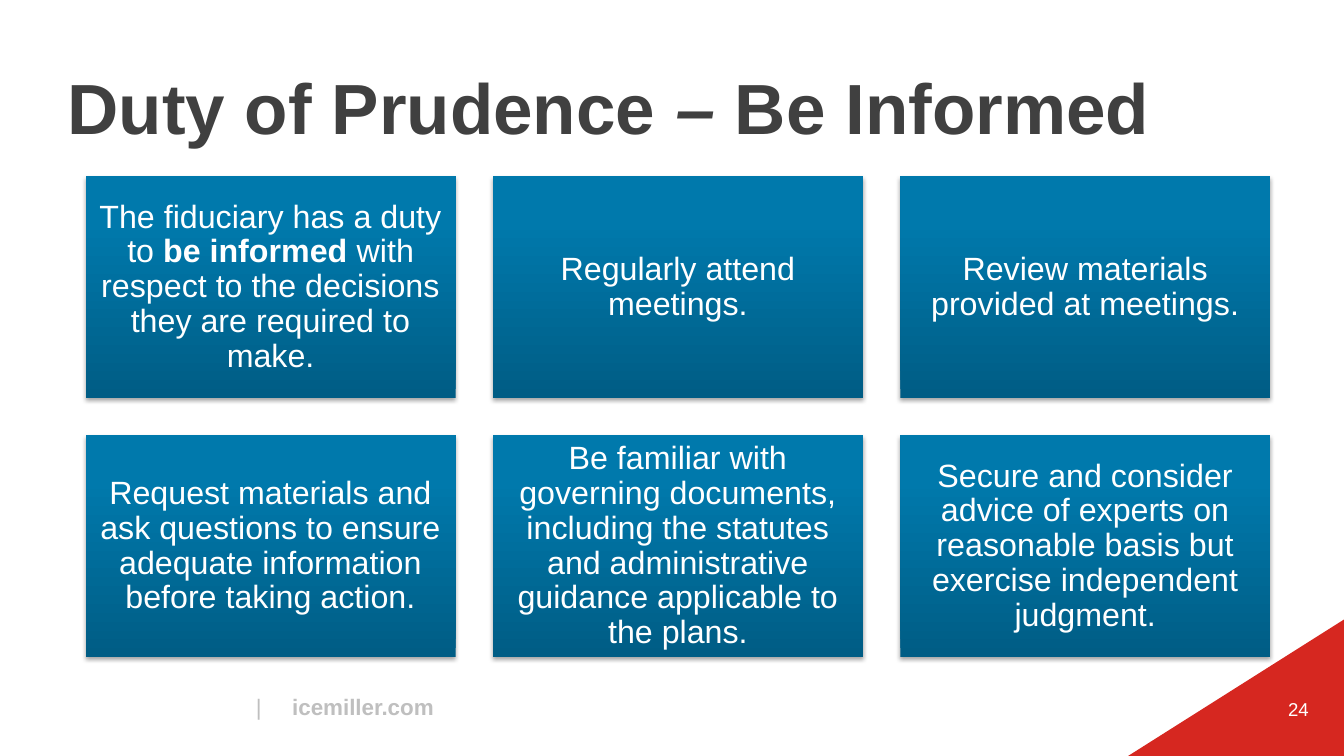
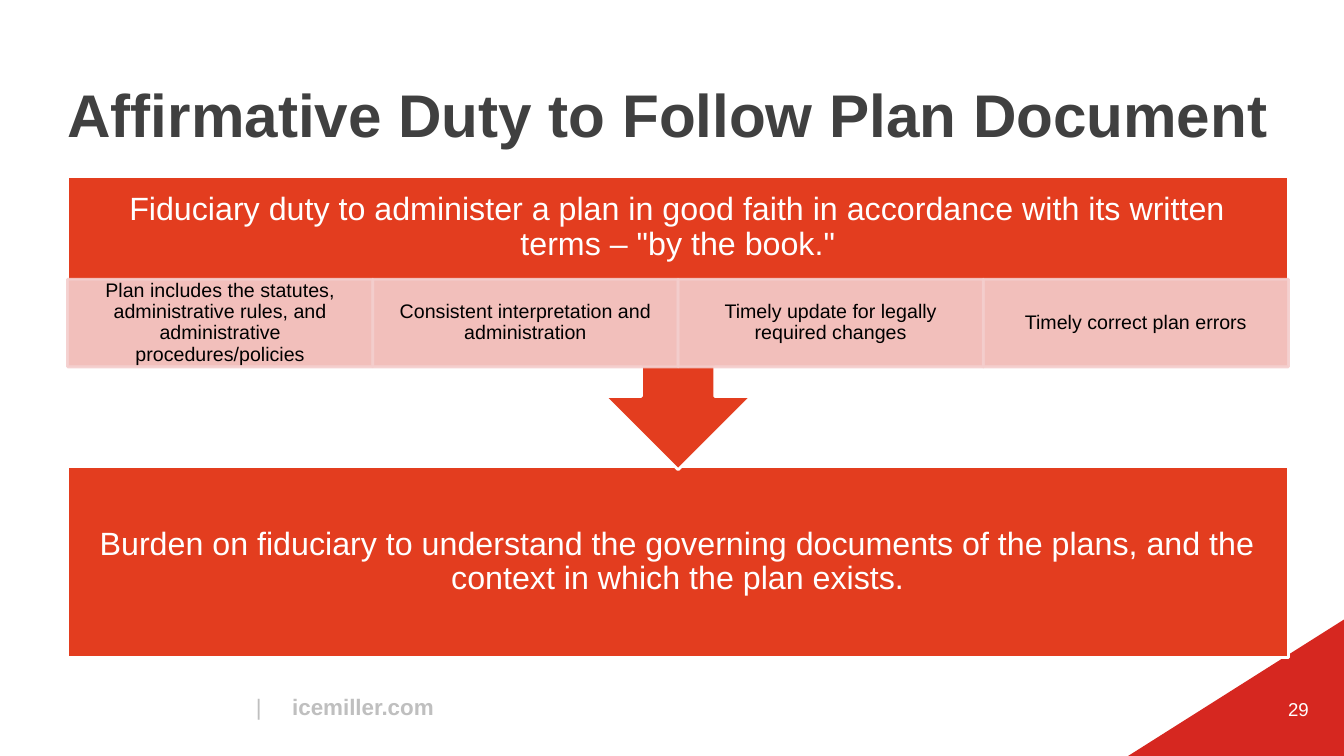
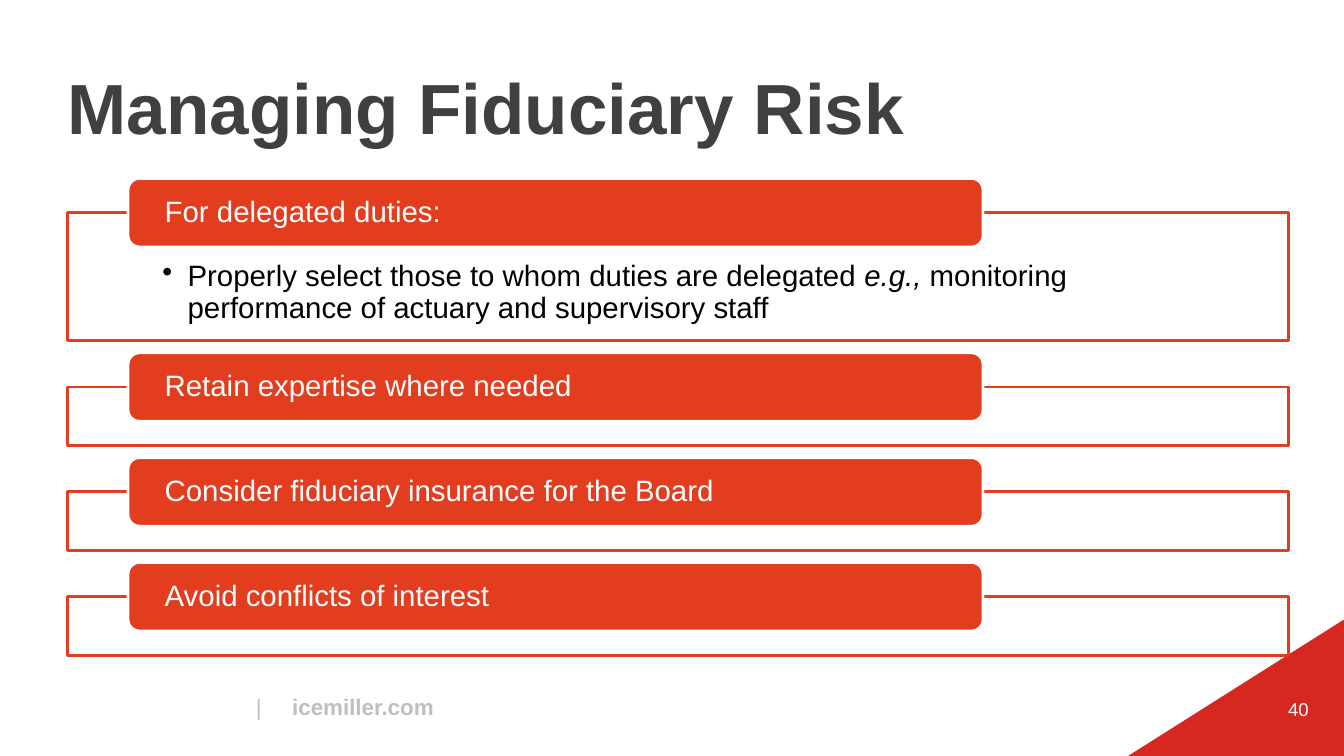
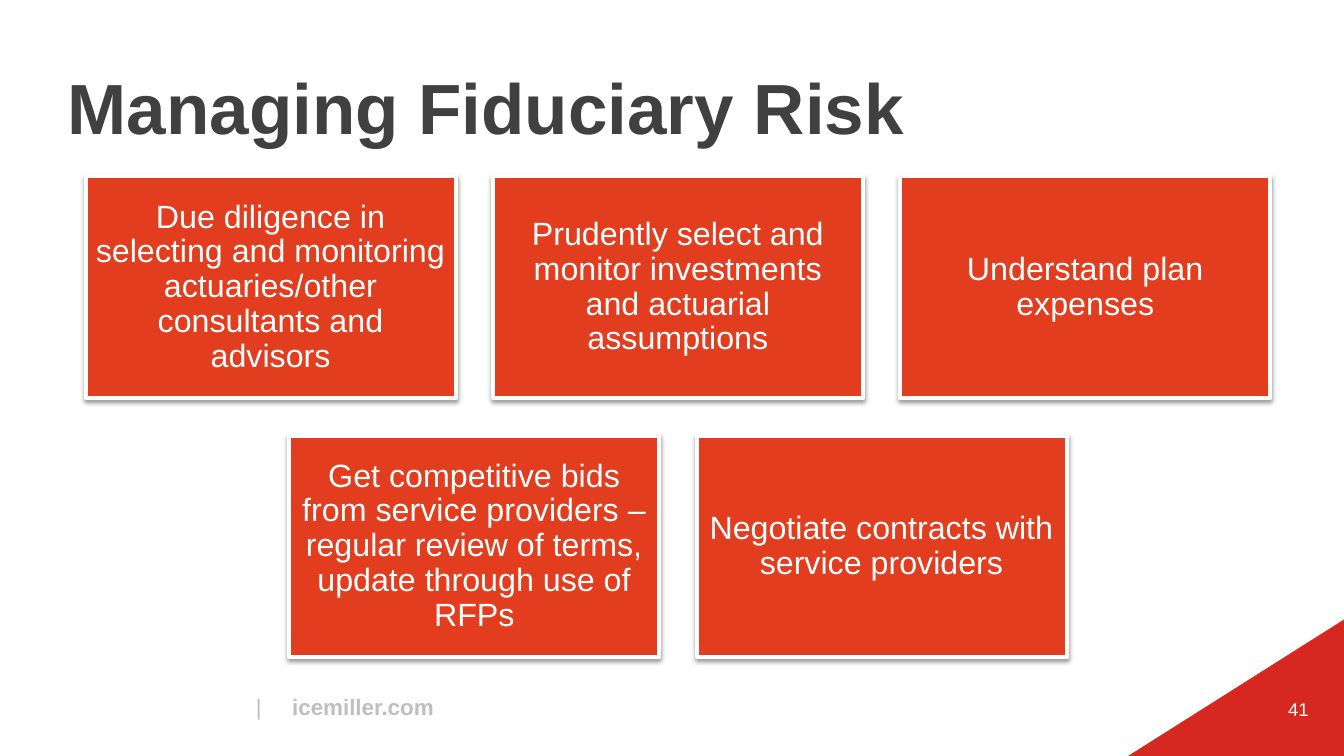
from dataclasses import dataclass
from typing import NamedTuple, Optional, Sequence, Union

from lxml import etree
from pptx import Presentation, util as u
from pptx.dml import color
from pptx.enum import shapes, text
from pptx.oxml import ns

FONT = "Arial"
RED, CORNER_RED, PINK = "E33D1F", "D62720", "F4CECD"
DEEP_BLUE, BLUE = "005D85", "0079AC"
WHITE, BLACK, CHARCOAL, GREY = "FFFFFF", "000000", "404040", "BFBFBF"

LEFT, CONTENT_WIDTH, CONTENT_TOP = 0.67, 12.11, 1.75
CARD_WIDTH, CARD_HEIGHT, CARD_LEFT = 3.67, 2.2, 0.85
CARD_STEP_X, CARD_STEP_Y, CARDS_PER_ROW = 4.04, 2.57, 3


class Box(NamedTuple):
    left: float
    top: float
    width: float
    height: float


class Insets(NamedTuple):
    left: float = 0.1
    top: float = 0.05
    right: float = 0.1
    bottom: float = 0.05


@dataclass(frozen=True)
class Run:
    words: str
    bold: bool = False
    italic: bool = False


Words = Union[str, Sequence[Run]]


@dataclass(frozen=True)
class CardStyle:
    fill: str
    gradient_start: Optional[str]
    line: Optional[str]
    shadow_opacity: int
    shadow_distance: float


@dataclass(frozen=True)
class Duty:
    heading: str
    detail: Optional[Words] = None


BLUE_CARD = CardStyle(BLUE, DEEP_BLUE, None, 35, 1.8)
RED_CARD = CardStyle(RED, None, WHITE, 38, 1.6)


def rgb(value: str) -> color.RGBColor:
    return color.RGBColor.from_string(value)


def inches(values: Sequence[float]) -> list:
    return [u.Inches(value) for value in values]


def add_xml(parent, tag: str, **attributes):
    return etree.SubElement(
        parent, ns.qn(tag), {key: str(value) for key, value in attributes.items()})


def set_opacity(fill, percent: int) -> None:
    colour = fill._xPr.find(ns.qn("a:solidFill"))[0]
    add_xml(colour, "a:alpha", val=percent * 1000)


def write(target, words: Words, *, size: float, colour: str = WHITE,
          align=text.PP_ALIGN.LEFT, anchor=text.MSO_ANCHOR.MIDDLE,
          insets: Insets = Insets(), spacing=0.9, bullet: Optional[str] = None,
          tab: Optional[float] = None) -> None:
    frame = target.text_frame
    frame.word_wrap = True
    frame.vertical_anchor = anchor
    (frame.margin_left, frame.margin_top,
     frame.margin_right, frame.margin_bottom) = inches(insets)
    paragraph = frame.paragraphs[0]
    paragraph.alignment = align
    paragraph.line_spacing = spacing
    properties = paragraph._p.get_or_add_pPr()
    if bullet:
        hanging = u.Inches(0.25)
        properties.set("marL", str(hanging))
        properties.set("indent", str(-hanging))
        add_xml(properties, "a:buChar", char=bullet)
    if tab:
        stops = add_xml(properties, "a:tabLst")
        add_xml(stops, "a:tab", pos=u.Inches(tab), algn="l")
    paragraph.font.size = u.Pt(size)
    for part in [Run(words)] if isinstance(words, str) else words:
        run = paragraph.add_run()
        run.text = part.words
        run.font.name = FONT
        run.font.size = u.Pt(size)
        run.font.bold = part.bold
        run.font.italic = part.italic
        run.font.color.rgb = rgb(colour)


def add_label(slide, box: Box, words: Words, **style) -> None:
    write(slide.shapes.add_textbox(*inches(box)), words, **style)


def add_panel(slide, box: Box, fill: str, line: Optional[str] = None, *,
              kind=shapes.MSO_SHAPE.RECTANGLE, line_width: float = 2,
              fill_opacity: int = 100, line_opacity: int = 100,
              rotation: float = 0):
    panel = slide.shapes.add_shape(kind, *inches(box))
    panel.shadow.inherit = False
    panel.rotation = rotation
    panel.fill.solid()
    panel.fill.fore_color.rgb = rgb(fill)
    if fill_opacity < 100:
        set_opacity(panel.fill, fill_opacity)
    if line:
        panel.line.color.rgb = rgb(line)
        panel.line.width = u.Pt(line_width)
        if line_opacity < 100:
            set_opacity(panel.line.fill, line_opacity)
    else:
        panel.line.fill.background()
    return panel


def add_shadow(panel, opacity: int, distance: float) -> None:
    effects = panel._element.spPr.find(ns.qn("a:effectLst"))
    shadow = add_xml(effects, "a:outerShdw", blurRad=u.Pt(3.1), dist=u.Pt(distance),
                     dir=90 * 60000, rotWithShape=0)
    shade = add_xml(shadow, "a:srgbClr", val=BLACK)
    add_xml(shade, "a:alpha", val=opacity * 1000)


def start_slide(deck, title: Words, number: int, title_size: float = 50.7):
    slide = deck.slides.add_slide(deck.slide_layouts[6])
    add_label(slide, Box(2.44, 6.83, 2.2, 0.37),
              [Run("|\t"), Run("icemiller.com", bold=True)],
              size=16, colour=GREY, anchor=text.MSO_ANCHOR.TOP, spacing=1.0, tab=0.36)
    add_panel(slide, Box(11.35, 5.61, 1.78, 2.45), CORNER_RED,
              kind=shapes.MSO_SHAPE.RIGHT_TRIANGLE, rotation=273.7)
    add_label(slide, Box(12.33, 6.83, 0.75, 0.4), str(number), size=13.3,
              align=text.PP_ALIGN.RIGHT, spacing=1.0)
    add_label(slide, Box(LEFT, 0.58, 12, 0.9),
              [Run(title, bold=True)] if isinstance(title, str) else title,
              size=title_size, colour=CHARCOAL, anchor=text.MSO_ANCHOR.BOTTOM,
              insets=Insets(0, 0, 0, 0), spacing=u.Pt(45.3))
    return slide


def add_cards(slide, cards: Sequence[Words], style: CardStyle) -> None:
    for index, words in enumerate(cards):
        row, column = divmod(index, CARDS_PER_ROW)
        in_row = min(CARDS_PER_ROW, len(cards) - row * CARDS_PER_ROW)
        column += (CARDS_PER_ROW - in_row) / 2
        box = Box(CARD_LEFT + column * CARD_STEP_X, CONTENT_TOP + row * CARD_STEP_Y,
                  CARD_WIDTH, CARD_HEIGHT)
        card = add_panel(slide, box, style.fill, style.line, line_width=3)
        if style.gradient_start:
            card.fill.gradient()
            card.fill.gradient_angle = 90
            stops = ((0, style.gradient_start), (0.8, style.fill))
            for stop, (position, shade) in zip(card.fill.gradient_stops, stops):
                stop.position = position
                stop.color.rgb = rgb(shade)
        add_shadow(card, style.shadow_opacity, style.shadow_distance)
        write(card, words, size=23, align=text.PP_ALIGN.CENTER,
              insets=Insets(0.1, 0.1, 0.1, 0.1))


def add_plan_flow(slide, duty: str, practices: Sequence[str], burden: str) -> None:
    statement = dict(size=23, align=text.PP_ALIGN.CENTER,
                     insets=Insets(0.18, 0.18, 0.18, 0.18))
    conclusion = add_panel(slide, Box(LEFT, 4.63, CONTENT_WIDTH, 1.89), RED, WHITE)
    write(conclusion, burden, **statement)
    add_panel(slide, Box(LEFT, CONTENT_TOP, CONTENT_WIDTH, 2.91), RED, WHITE,
              kind=shapes.MSO_SHAPE.UP_ARROW_CALLOUT, rotation=180)
    add_label(slide, Box(LEFT, CONTENT_TOP, CONTENT_WIDTH, 1.02), duty, **statement)
    width = CONTENT_WIDTH / len(practices)
    for index, practice in enumerate(practices):
        cell = add_panel(slide, Box(LEFT + index * width, 2.77, width, 0.87), PINK, PINK,
                         fill_opacity=90, line_opacity=90)
        write(cell, practice, size=14, colour=BLACK, align=text.PP_ALIGN.CENTER,
              insets=Insets(0.11, 0.02, 0.11, 0.02))


def add_duties(slide, duties: Sequence[Duty]) -> None:
    bar_top, bar_height, gap = 1.77, 0.68, 0.12
    for duty in duties:
        frame_top = bar_top + bar_height / 2
        frame_height = 1.27 if duty.detail else 0.58
        outline = add_panel(slide, Box(LEFT, frame_top, CONTENT_WIDTH, frame_height),
                            WHITE, RED, fill_opacity=90)
        if duty.detail:
            write(outline, duty.detail, size=21, colour=BLACK, bullet="•",
                  anchor=text.MSO_ANCHOR.TOP, insets=Insets(0.94, 0.48, 0.94, 0.16))
        bar = add_panel(slide, Box(1.27, bar_top, 8.48, bar_height), RED, WHITE,
                        kind=shapes.MSO_SHAPE.ROUNDED_RECTANGLE)
        write(bar, duty.heading, size=21, insets=Insets(0.33, 0, 0.33, 0))
        bar_top = frame_top + frame_height + gap


def main() -> None:
    deck = Presentation()
    deck.slide_width, deck.slide_height = inches((13.33, 7.5))

    informed = start_slide(deck, [
        Run("Duty of Prudence ", bold=True),
        Run("– ", bold=True, italic=True),
        Run("Be Informed", bold=True),
    ], 24)
    add_cards(informed, [
        [Run("The fiduciary has a duty to "), Run("be informed ", bold=True),
         Run("with respect to the decisions they are required to make.")],
        "Regularly attend meetings.",
        "Review materials provided at meetings.",
        "Request materials and ask questions to ensure adequate information "
        "before taking action.",
        "Be familiar with governing documents, including the statutes and "
        "administrative guidance applicable to the plans.",
        "Secure and consider advice of experts on reasonable basis but exercise "
        "independent judgment.",
    ], BLUE_CARD)

    plan_document = start_slide(deck, "Affirmative Duty to Follow Plan Document", 29, 43)
    add_plan_flow(
        plan_document,
        "Fiduciary duty to administer a plan in good faith in accordance with its "
        "written terms – \"by the book.\"",
        ["Plan includes the statutes, administrative rules, and administrative "
         "procedures/policies",
         "Consistent interpretation and administration",
         "Timely update for legally required changes",
         "Timely correct plan errors"],
        "Burden on fiduciary to understand the governing documents of the plans, "
        "and the context in which the plan exists.")

    delegation = start_slide(deck, "Managing Fiduciary Risk", 40)
    add_duties(delegation, [
        Duty("For delegated duties:", [
            Run("Properly select those to whom duties are delegated "),
            Run("e.g.,", italic=True),
            Run(" monitoring performance of actuary and supervisory staff"),
        ]),
        Duty("Retain expertise where needed"),
        Duty("Consider fiduciary insurance for the Board"),
        Duty("Avoid conflicts of interest"),
    ])

    providers = start_slide(deck, "Managing Fiduciary Risk", 41)
    add_cards(providers, [
        "Due diligence in selecting and monitoring actuaries/other consultants and "
        "advisors",
        "Prudently select and monitor investments and actuarial assumptions",
        "Understand plan expenses",
        "Get competitive bids from service providers – regular review of terms, "
        "update through use of RFPs",
        "Negotiate contracts with service providers",
    ], RED_CARD)

    deck.save("out.pptx")


if __name__ == "__main__":
    main()
